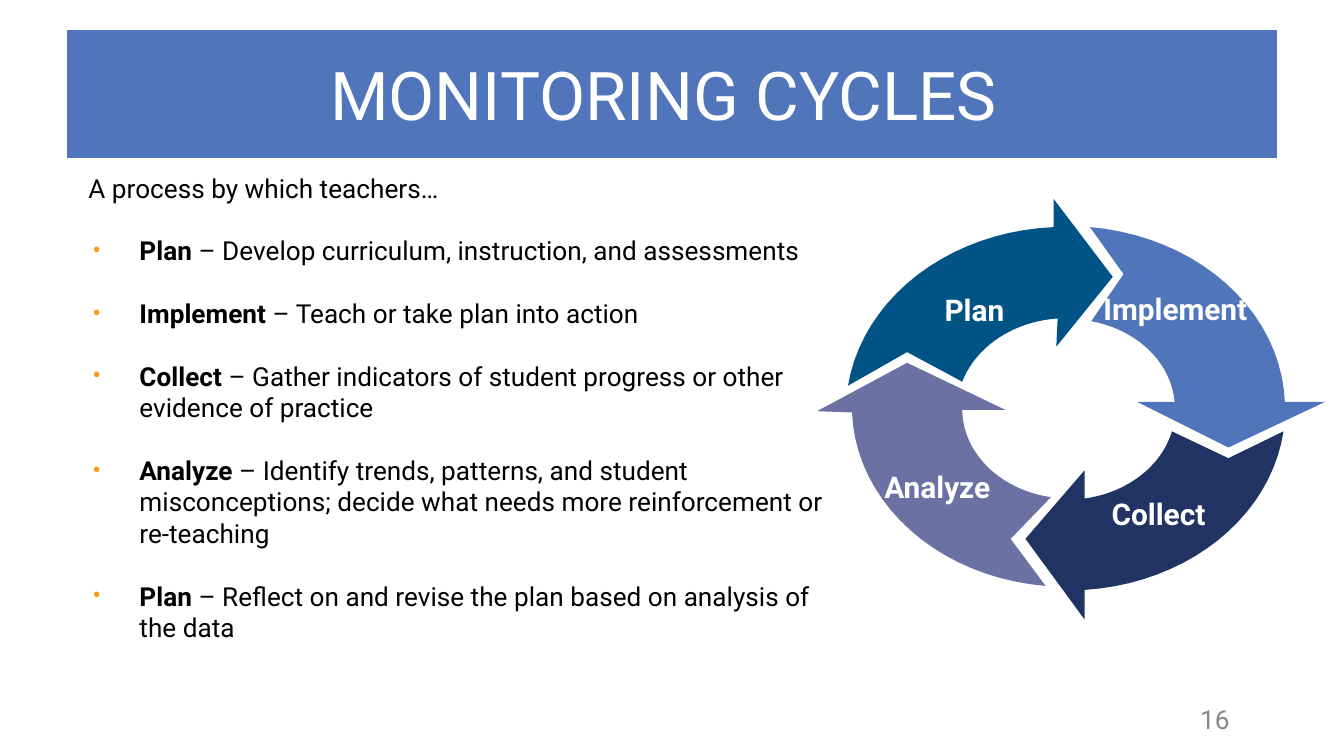
import math
from dataclasses import dataclass

from lxml import etree
from pptx import Presentation
from pptx.dml.color import RGBColor
from pptx.enum.text import MSO_ANCHOR, MSO_AUTO_SIZE, PP_ALIGN
from pptx.oxml.ns import qn
from pptx.util import Pt

SCALE = 9144  # EMU per px, 100 px to the inch
LEFT, CENTER = PP_ALIGN.LEFT, PP_ALIGN.CENTER
TOP, MIDDLE = MSO_ANCHOR.TOP, MSO_ANCHOR.MIDDLE
FIXED = MSO_AUTO_SIZE.NONE

TITLE = "MONITORING CYCLES "
INTRO = "A process by which teachers…"
STEPS = [
    ("Plan", "Develop curriculum, instruction, and assessments"),
    ("Implement", "Teach or take plan into action"),
    ("Collect", "Gather indicators of student progress or other evidence of practice"),
    ("Analyze", "Identify trends, patterns, and student misconceptions; "
                "decide what needs more reinforcement or re-teaching"),
    ("Plan", "Reflect on and revise the plan based on analysis of the data"),
]

# Ring that the arrows follow: centre and outer radii
HUB_X, HUB_Y, RAD_X, RAD_Y = 795, 304, 161, 135


@dataclass(frozen=True)
class Theme:
    font: str = "Roboto"
    blue: str = "5075BB"
    teal: str = "005485"
    navy: str = "213363"
    violet: str = "6B72A3"
    orange: str = "F89C15"
    gray: str = "888888"
    black: str = "000000"
    white: str = "FFFFFF"
    head: int = 36
    label: int = 16
    body: int = 14
    gap: float = 16.8


THEME = Theme()

# Name, colour, label box, outer arc, arrow head, inner arc, tail notch
ARROWS = [
    ("Plan", THEME.teal, (686, 221, 78, 21), [(631, 287), (784, 169)],
     [(784, 148), (828, 206), (786, 258)], [(787, 237), (716, 284)], (675, 262)),
    ("Collect", THEME.navy, (823, 373, 78, 21), [(955, 321), (807, 439)],
     [(807, 461), (763, 401), (807, 350)], [(807, 371), (872, 321)], (914, 341)),
    ("Analyze", THEME.violet, (651, 357, 93, 12), [(778, 436), (634, 307)],
     [(608, 306), (675, 270), (748, 305)], [(716, 305), (782, 370)], (752, 401)),
    ("Implement", THEME.blue, (817, 221, 115, 20), [(811, 169), (956, 299)],
     [(986, 299), (914, 333), (846, 299)], [(874, 299), (812, 239)], (836, 204)),
]


def px(value):
    return round(value * SCALE)


def rgb(code):
    return RGBColor.from_string(code)


def arc(start, end, steps=20):
    """Points from start to end that bend around the hub of the ring."""
    def polar(point):
        x, y = (point[0] - HUB_X) / RAD_X, (point[1] - HUB_Y) / RAD_Y
        return math.hypot(x, y), math.atan2(y, x)

    (near, turn), (far, last) = polar(start), polar(end)
    sweep = math.remainder(last - turn, math.tau)
    points = []
    for i in range(steps + 1):
        part = i / steps
        r, a = near + (far - near) * part, turn + sweep * part
        points.append((HUB_X + RAD_X * r * math.cos(a),
                       HUB_Y + RAD_Y * r * math.sin(a)))
    return points


def write(para, text, size=THEME.body, color=THEME.black, bold=False):
    run = para.add_run()
    run.text = text
    font = run.font
    font.name, font.size, font.bold = THEME.font, Pt(size), bold
    font.color.rgb = rgb(color)


def indent(para, left, first, mark=None):
    """Hang the first line, with a coloured bullet when mark is given."""
    props = para._p.get_or_add_pPr()
    props.set("marL", str(px(left)))
    props.set("indent", str(px(first)))
    if mark:
        tint = etree.SubElement(props, qn("a:buClr"))
        etree.SubElement(tint, qn("a:srgbClr"), val=THEME.orange)
        etree.SubElement(props, qn("a:buFont"), typeface=THEME.font)
        etree.SubElement(props, qn("a:buChar"), char=mark)
    else:
        etree.SubElement(props, qn("a:buNone"))


class Deck:
    def __init__(self, theme, width):
        self.theme = theme
        self.show = Presentation()
        self.show.slide_width = px(width)
        self.show.slide_height = px(width) * 9 // 16
        self.slide = self.show.slides.add_slide(self.show.slide_layouts[5])

    def frame(self, shape, anchor, pad_x, pad_y):
        frame = shape.text_frame
        frame.word_wrap, frame.auto_size = True, FIXED
        frame.vertical_anchor = anchor
        frame.margin_left = frame.margin_right = px(pad_x)
        frame.margin_top = frame.margin_bottom = px(pad_y)
        return frame

    def title(self, text, x, y, w, h):
        shape = self.slide.shapes.title
        shape.left, shape.top, shape.width, shape.height = map(px, (x, y, w, h))
        shape.fill.solid()
        shape.fill.fore_color.rgb = rgb(self.theme.blue)
        shape.line.color.rgb = rgb(self.theme.blue)
        shape.line.width = Pt(0.75)
        para = self.frame(shape, MIDDLE, 10, 5).paragraphs[0]
        para.alignment = CENTER
        write(para, text, size=self.theme.head, color=self.theme.white)

    def box(self, x, y, w, h, anchor=MIDDLE, pad_x=0, pad_y=0):
        shape = self.slide.shapes.add_textbox(*map(px, (x, y, w, h)))
        return self.frame(shape, anchor, pad_x, pad_y)

    def label(self, text, place, spacing=0.95, pad_x=0, pad_y=0, **style):
        para = self.box(*place, pad_x=pad_x, pad_y=pad_y).paragraphs[0]
        para.alignment, para.line_spacing = CENTER, spacing
        write(para, text, **style)

    def list(self, intro, items, place):
        frame = self.box(*place, anchor=TOP, pad_x=10, pad_y=10)
        para = frame.paragraphs[0]
        indent(para, 38, -38)
        write(para, intro)
        for name, text in items:
            para = frame.add_paragraph()
            indent(para, 38, -35, mark="•")
            para.alignment, para.space_before = LEFT, Pt(self.theme.gap)
            write(para, name, bold=True)
            write(para, f" – {text}")

    def arrow(self, color, outer, head, inner, notch):
        points = [*arc(*outer), *head, *arc(*inner), notch]
        first, *rest = [(px(x), px(y)) for x, y in points]
        pen = self.slide.shapes.build_freeform(*first)
        pen.add_line_segments(rest, close=True)
        shape = pen.convert_to_shape()
        shape.shadow.inherit = False
        shape.fill.solid()
        shape.fill.fore_color.rgb = rgb(color)
        shape.line.fill.background()


def main():
    deck = Deck(THEME, 1000)
    deck.title(TITLE, 50, 23, 900, 94)
    deck.label("16", (850, 520, 108, 30), spacing=1.0, pad_x=10, pad_y=5,
               color=THEME.gray)
    deck.list(INTRO, STEPS, (56, 118, 583, 388))
    for _, color, _, *outline in ARROWS:
        deck.arrow(color, *outline)
    for name, _, place, *_ in ARROWS:
        deck.label(name, place, size=THEME.label, color=THEME.white, bold=True)
    deck.show.save("out.pptx")


if __name__ == "__main__":
    main()
